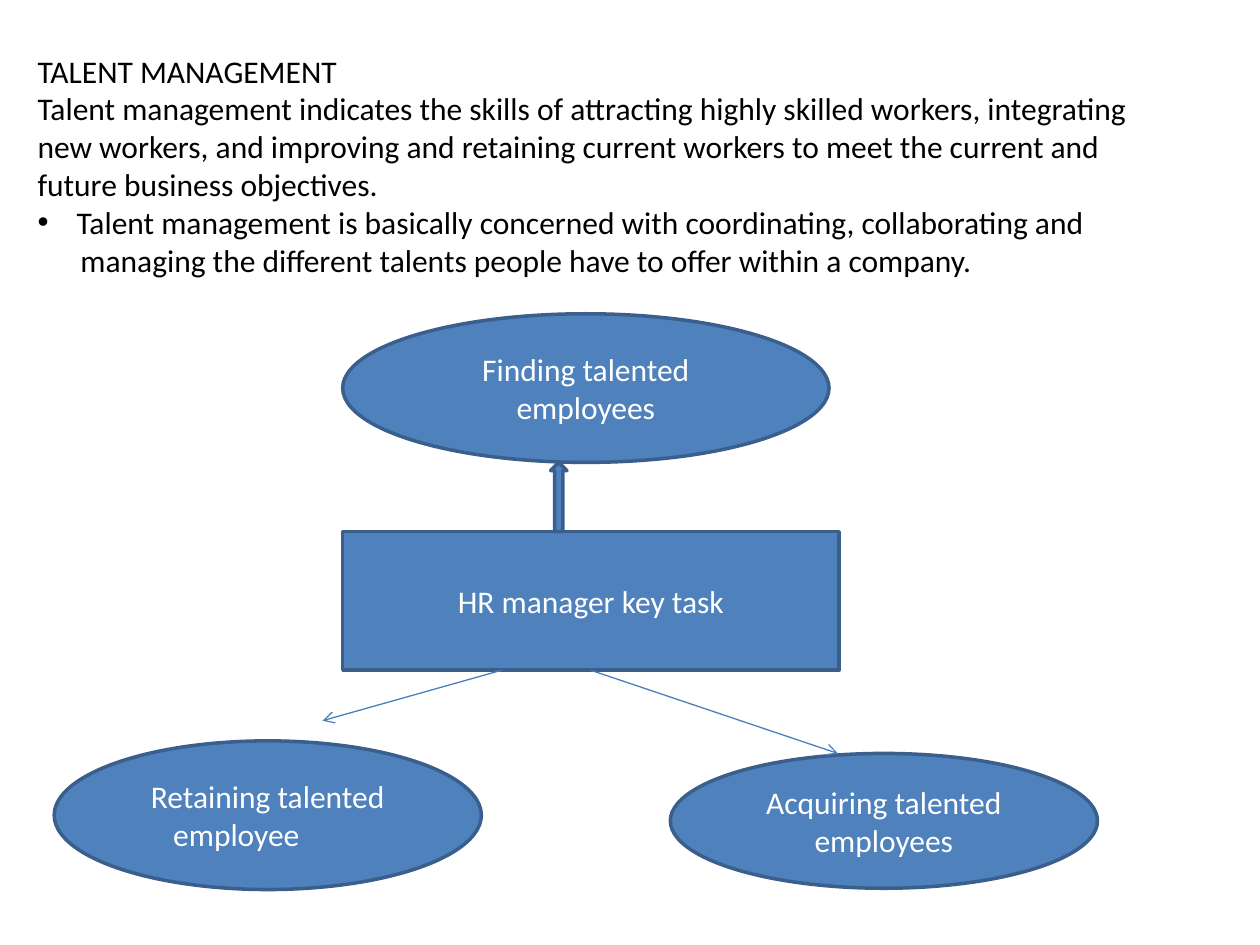
"""Build the talent management slide with its HR task diagram."""
from pptx import Presentation
from pptx.dml.color import RGBColor
from pptx.enum.shapes import MSO_CONNECTOR as Link, MSO_SHAPE as Kind
from pptx.enum.text import MSO_ANCHOR as Anchor, MSO_AUTO_SIZE as Fit, PP_ALIGN as Align
from pptx.oxml.ns import qn
from pptx.util import Inches, Pt
from lxml.etree import SubElement

BLACK = RGBColor(0, 0, 0)
WHITE = RGBColor(255, 255, 255)
BLUE = RGBColor(0x4F, 0x81, 0xBD)
EDGE = RGBColor(0x3A, 0x5F, 0x8C)
LINE = RGBColor(0x4B, 0x7E, 0xBC)

INTRO_BOX = (0.2, 0.36, 9.61, 1.92)
INTRO = [
    ("TALENT MANAGEMENT", 0, False),
    ("Talent management indicates the skills of attracting highly skilled workers, integrating", 0, False),
    ("new workers, and improving and retaining current workers to meet the current and", 0, False),
    ("future business objectives.", 0, False),
    ("Talent management is basically concerned with coordinating, collaborating and", 0.31, True),
    ("managing the different talents people have to offer within a company.", 0.34, False),
]
NODES = {
    "find": (Kind.OVAL, (2.72, 2.49, 3.86, 1.18), "Finding talented employees"),
    "task": (Kind.RECTANGLE, (2.72, 4.22, 3.94, 1.1), "HR manager key task"),
    "retain": (Kind.OVAL, (0.43, 5.88, 3.39, 1.18), "Retaining talented employee\t"),
    "acquire": (Kind.OVAL, (5.32, 5.98, 3.39, 1.07), "Acquiring talented employees"),
    "up": (Kind.UP_ARROW, (4.37, 3.67, 0.13, 0.55), ""),
}
ARROWS = [((3.98, 5.32), (2.56, 5.72)), ((4.69, 5.32), (6.65, 5.98))]


def style(para, color):
    for run in para.runs:
        run.font.name = "Calibri"
        run.font.size = Pt(18)
        run.font.color.rgb = color


def add_intro(slide):
    frame = slide.shapes.add_textbox(*map(Inches, INTRO_BOX)).text_frame
    frame.word_wrap = True
    frame.auto_size = Fit.SHAPE_TO_FIT_TEXT
    for i, (text, left, dot) in enumerate(INTRO):
        para = frame.paragraphs[0] if i == 0 else frame.add_paragraph()
        para.text = text
        style(para, BLACK)
        props = para._p.get_or_add_pPr()
        props.set("marL", str(Inches(left)))
        props.set("indent", str(-Inches(left) if dot else 0))
        if dot:
            SubElement(props, qn("a:buFont")).set("typeface", "Arial")
            SubElement(props, qn("a:buChar")).set("char", "•")


def add_node(slide, kind, box, text):
    node = slide.shapes.add_shape(kind, *map(Inches, box))
    node.shadow.inherit = False
    node.fill.solid()
    node.fill.fore_color.rgb = BLUE
    node.line.color.rgb = EDGE
    node.line.width = Pt(2)
    if text:
        frame = node.text_frame
        frame.text = text
        frame.word_wrap = True
        frame.vertical_anchor = Anchor.MIDDLE
        frame.paragraphs[0].alignment = Align.CENTER
        style(frame.paragraphs[0], WHITE)
    return node


def add_arrow(slide, start, end):
    arrow = slide.shapes.add_connector(Link.STRAIGHT, *map(Inches, start + end))
    arrow.line.color.rgb = LINE
    arrow.line.width = Pt(0.75)
    SubElement(arrow.line._get_or_add_ln(), qn("a:tailEnd")).set("type", "arrow")
    SubElement(arrow._element.spPr, qn("a:effectLst"))
    return arrow


def main():
    deck = Presentation()
    deck.slide_width, deck.slide_height = Inches(10), Inches(7.5)
    slide = deck.slides.add_slide(deck.slide_layouts[6])
    add_intro(slide)
    nodes = {name: add_node(slide, *node) for name, node in NODES.items()}
    left, right = [add_arrow(slide, *ends) for ends in ARROWS]
    right.begin_connect(nodes["task"], 2)
    deck.save("out.pptx")


if __name__ == "__main__":
    main()
